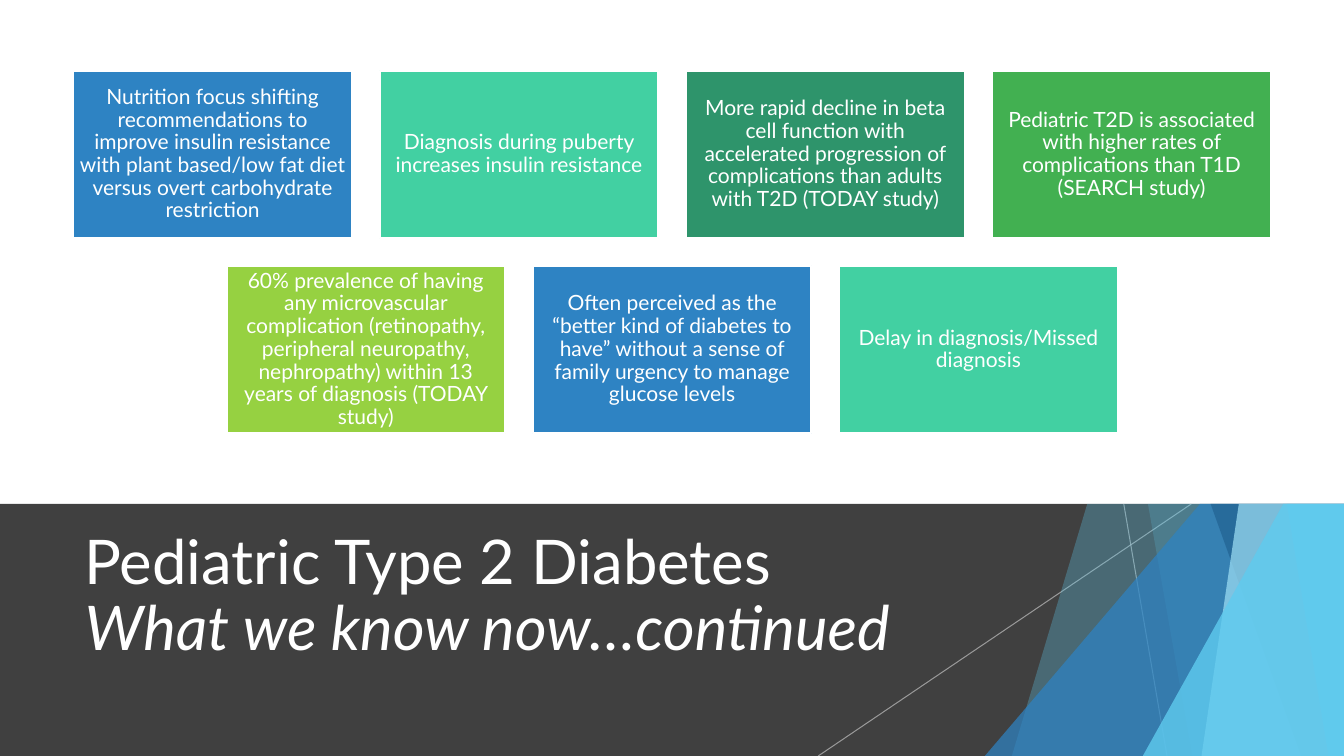
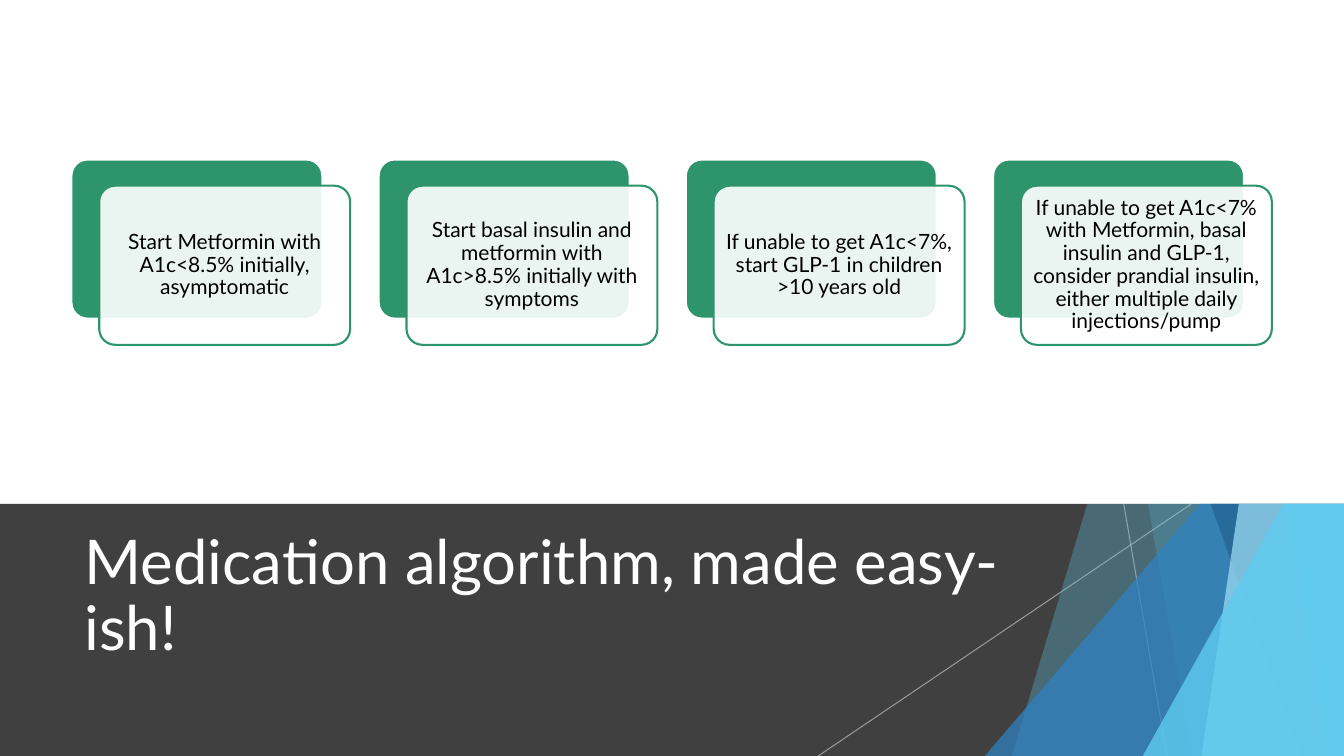
"""Build two diabetes slides: a tile grid and a row of layered cards above a faceted title band."""
from lxml.etree import SubElement
from pptx import Presentation
from pptx.dml.color import RGBColor
from pptx.enum.shapes import MSO_CONNECTOR, MSO_SHAPE
from pptx.enum.text import MSO_ANCHOR, MSO_AUTO_SIZE, PP_ALIGN
from pptx.oxml.ns import qn
from pptx.util import Cm, Pt

FONT = "Lato"
SLIDE_W, SLIDE_H = 33.87, 19.05
COLORS = {
    "white": "FFFFFF", "black": "000000", "band": "404040", "hairline": "BFBFBF",
    "blue": "2E83C3", "navy": "226292", "sky": "5FCBEF", "pale": "9FE0F5",
    "mint": "42D0A2", "forest": "2E946B", "green": "42B051", "lime": "96D141",
}
BAND_BOX = (0, 12.7, SLIDE_W, 6.35)
TILE_BOX = (1.85, 1.78, 30.18, 9.14)
CARD_BOX = (1.8, 4.02, 30.25, 4.67)

HAIRLINES = [(28.32, 29.41), (30.02, 20.62)]
FACETS = [
    (27.4, 25.5, "sky", 30),
    (28.93, 30.05, "sky", 20),
    (30.24, 24.82, "blue", 72),
    (30.51, 32.79, "navy", 70),
    (31.22, 30.28, "pale", 70),
    (32.43, 33.48, "sky", 65),
    (32.34, 28.8, "sky", 80),
]
TILE_COLORS = ["blue", "mint", "forest", "green", "lime"]
TILE_ROWS = [
    [
        "Nutrition focus shifting recommendations to improve insulin resistance "
        "with plant based/low fat diet versus overt carbohydrate restriction",
        "Diagnosis during puberty increases insulin resistance",
        "More rapid decline in beta cell function with accelerated progression "
        "of complications than adults with T2D (TODAY study)",
        "Pediatric T2D is associated with higher rates of complications than T1D (SEARCH study)",
    ],
    [
        "60% prevalence of having any microvascular complication (retinopathy, peripheral "
        "neuropathy, nephropathy) within 13 years of diagnosis (TODAY study)",
        "Often perceived as the “better kind of diabetes to have” without a sense of "
        "family urgency to manage glucose levels",
        "Delay in diagnosis/Missed diagnosis",
    ],
]
CARDS = [
    "Start Metformin with A1c<8.5% initially, asymptomatic",
    "Start basal insulin and metformin with A1c>8.5% initially with symptoms",
    "If unable to get A1c<7%, start GLP-1 in children >10 years old",
    "If unable to get A1c<7% with Metformin, basal insulin and GLP-1, consider "
    "prandial insulin, either multiple daily injections/pump",
]


def rgb(name):
    """Return the named colour."""
    return RGBColor.from_string(COLORS[name])


def set_alpha(parent, percent):
    """Make the solid fill directly under an XML element partly opaque."""
    clr = parent.find(qn("a:solidFill")).find(qn("a:srgbClr"))
    SubElement(clr, qn("a:alpha"), val=str(percent * 1000))


def paint(sp, fill, line=None, alpha=None):
    """Give a shape a flat fill, an optional outline and no shadow."""
    sp.shadow.inherit = False
    sp.fill.solid()
    sp.fill.fore_color.rgb = rgb(fill)
    if alpha:
        set_alpha(sp.element.spPr, alpha)
    if line:
        sp.line.color.rgb = rgb(line)
        sp.line.width = Pt(1.5)
    else:
        sp.line.fill.background()


def add_box(s, x, y, w, h, kind=MSO_SHAPE.RECTANGLE, **style):
    """Add a painted preset shape."""
    sp = s.shapes.add_shape(kind, Cm(x), Cm(y), Cm(w), Cm(h))
    if kind == MSO_SHAPE.ROUNDED_RECTANGLE:
        sp.adjustments[0] = 0.1
    paint(sp, **style)
    return sp


def write(sp, *lines, size=15, color="white", align=PP_ALIGN.CENTER, margin=0.15, italic_from=1):
    """Write lines into one paragraph, in italics from the given line on."""
    tf = sp.text_frame
    tf.word_wrap = True
    tf.auto_size = MSO_AUTO_SIZE.NONE
    tf.vertical_anchor = MSO_ANCHOR.MIDDLE
    tf.margin_left = tf.margin_right = Cm(margin)
    tf.margin_top = tf.margin_bottom = Cm(0.13)
    p = tf.paragraphs[0]
    p.alignment = align
    p.line_spacing = 0.9
    for i, line in enumerate(lines):
        if i:
            p.add_line_break()
        r = p.add_run()
        r.text = line
        r.font.name = FONT
        r.font.size = Pt(size)
        r.font.color.rgb = rgb(color)
        if i >= italic_from:
            r.font.italic = True


def add_hairline(s, x1, y1, x2, y2):
    """Add a thin translucent line."""
    ln = s.shapes.add_connector(MSO_CONNECTOR.STRAIGHT, Cm(x1), Cm(y1), Cm(x2), Cm(y2))
    ln.line.color.rgb = rgb("hairline")
    ln.line.width = Pt(0.75)
    sp_pr = ln.element.spPr
    set_alpha(sp_pr.find(qn("a:ln")), 70)
    SubElement(sp_pr, qn("a:effectLst"))


def add_band(s, box, *title):
    """Draw the dark band with its facets and set the title on it."""
    x, y, w, h = box
    right, bottom = x + w, y + h
    add_box(s, *box, fill="band")
    for top_x, foot_x in HAIRLINES:
        add_hairline(s, x + top_x, y, x + foot_x, bottom)
    for top_x, foot_x, color, alpha in FACETS:
        fb = s.shapes.build_freeform(Cm(x + top_x), Cm(y))
        corners = [(right, y), (right, bottom), (x + foot_x, bottom)]
        fb.add_line_segments([(Cm(cx), Cm(cy)) for cx, cy in corners], close=True)
        paint(fb.convert_to_shape(), color, alpha=alpha)
    sp = s.shapes.title
    sp.left, sp.top, sp.width, sp.height = Cm(x + 1.88), Cm(y + 0.53), Cm(23.88), Cm(3.66)
    write(sp, *title, size=44, align=PP_ALIGN.LEFT, margin=0.25)
    sp.element.getparent().append(sp.element)


def add_tiles(s, box, rows, gap=0.7):
    """Lay out rows of coloured tiles, each row centred in the box."""
    x, y, w, h = box
    cols = max(len(row) for row in rows)
    tile_w = (w - gap * (cols - 1)) / cols
    tile_h = (h - gap * (len(rows) - 1)) / len(rows)
    count = 0
    for i, row in enumerate(rows):
        indent = (cols - len(row)) * (tile_w + gap) / 2
        for j, text in enumerate(row):
            fill = TILE_COLORS[count % len(TILE_COLORS)]
            sp = add_box(s, x + indent + j * (tile_w + gap), y + i * (tile_h + gap),
                         tile_w, tile_h, fill=fill, line="white")
            write(sp, text)
            count += 1


def add_cards(s, box, texts, gap=0.72, dx=0.7, dy=0.66):
    """Lay out a row of cards, each a green plate under a shifted white sheet."""
    x, y, w, h = box
    cell_w = (w - gap * (len(texts) - 1)) / len(texts)
    size = (cell_w - dx, h - dy)
    kind = MSO_SHAPE.ROUNDED_RECTANGLE
    for i, text in enumerate(texts):
        left = x + i * (cell_w + gap)
        add_box(s, left, y, *size, kind=kind, fill="forest", line="white")
        sp = add_box(s, left + dx, y + dy, *size, kind=kind,
                     fill="white", line="forest", alpha=90)
        write(sp, text, color="black")


def main():
    """Build and save the presentation."""
    prs = Presentation()
    prs.slide_width, prs.slide_height = Cm(SLIDE_W), Cm(SLIDE_H)
    layout = prs.slide_layouts[5]

    s = prs.slides.add_slide(layout)
    add_band(s, BAND_BOX, "Pediatric Type 2 Diabetes", "What we know now…continued")
    add_tiles(s, TILE_BOX, TILE_ROWS)

    s = prs.slides.add_slide(layout)
    add_band(s, BAND_BOX, "Medication algorithm, made easy-ish!")
    add_cards(s, CARD_BOX, CARDS)

    prs.save("out.pptx")


if __name__ == "__main__":
    main()
